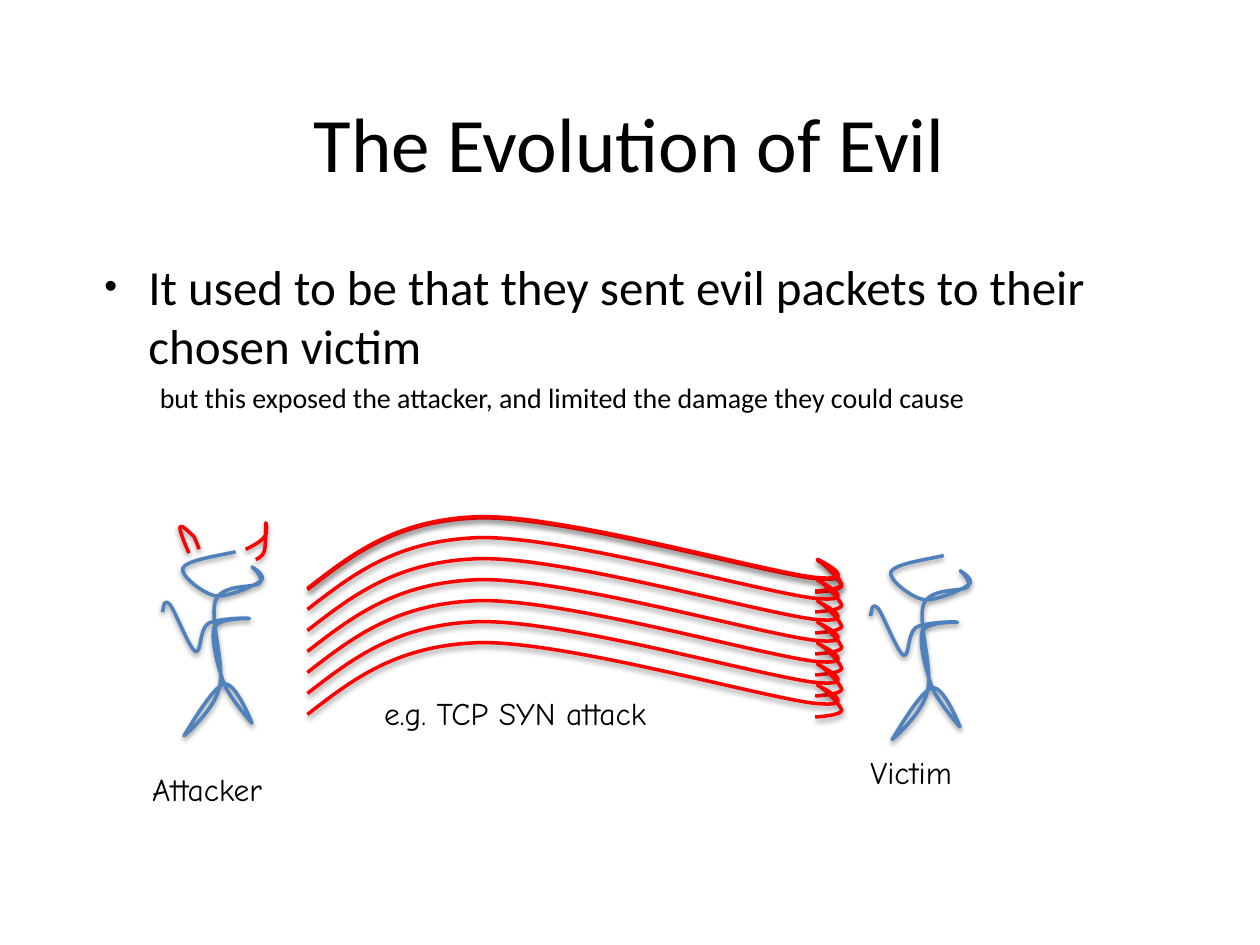
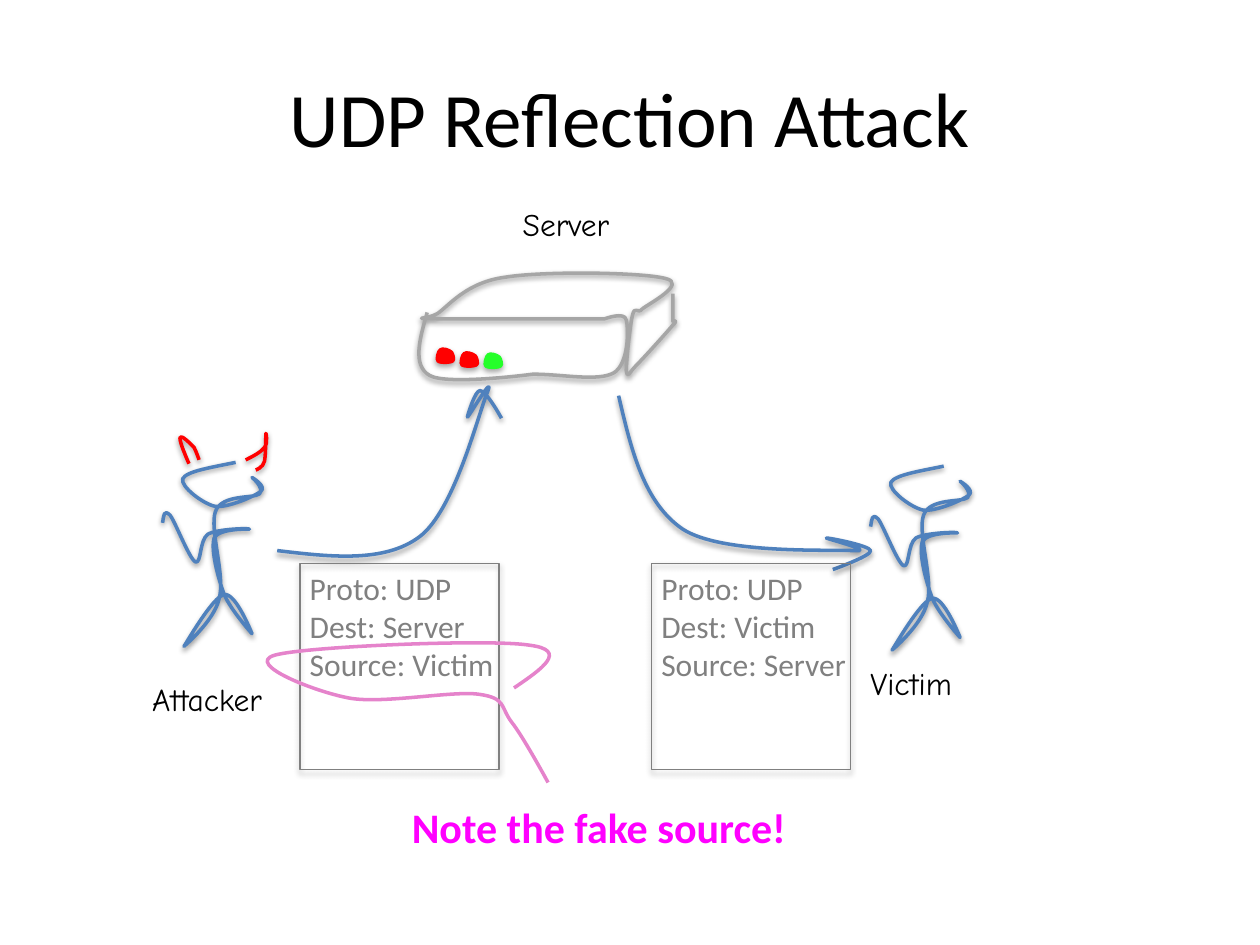
from lxml import etree
from pptx import Presentation
from pptx.dml.color import RGBColor
from pptx.enum import shapes, text
from pptx.oxml.ns import qn
from pptx.util import Inches, Pt

BLACK = RGBColor(0x00, 0x00, 0x00)
BLUE = RGBColor(0x4F, 0x81, 0xBD)
RED = RGBColor(0xFF, 0x00, 0x00)
GREEN = RGBColor(0x25, 0xFF, 0x2A)
SILVER = RGBColor(0xA6, 0xA6, 0xA6)
GRAY = RGBColor(0x80, 0x80, 0x80)
PINK = RGBColor(0xE5, 0x83, 0xCB)
MAGENTA = RGBColor(0xFF, 0x00, 0xFF)

BODY_FONT = "Calibri"
HAND_FONT = "Comic Neue"
UNIT = Inches(0.01)
STROKE_SHADOW = {"alpha": 38000, "blur": 40000, "dist": 20000}
SOLID_SHADOW = {"alpha": 35000, "blur": 40000, "dist": 23000}

# fmt: off
PERSON = [
    58, 0,
    39, 4, 19, 7, 16, 13,
    14, 19, 32, 33, 42, 35,
    52, 36, 73, 27, 78, 23,
    83, 19, 71, 12, 71, 12,
    71, 12, 81, 20, 77, 25,
    72, 29, 47, 25, 42, 39,
    37, 53, 50, 90, 45, 108,
    41, 126, 17, 146, 17, 146,
    18, 145, 40, 106, 49, 105,
    58, 103, 71, 136, 71, 136,
    71, 136, 54, 117, 49, 105,
    44, 92, 38, 69, 41, 60,
    45, 52, 70, 53, 69, 53,
    68, 52, 43, 53, 36, 57,
    29, 62, 31, 81, 26, 79,
    21, 76, 10, 47, 6, 42,
    1, 37, 1, 42, 0, 48,
]
HORNS = [
    [
        21, 1,
        17, -8, 13, -18, 14, -20,
        15, -22, 22, -15, 25, -12,
        27, -8, 29, -2, 29, -2,
    ],
    [
        66, -2,
        72, -5, 78, -8, 81, -12,
        84, -15, 82, -25, 82, -23,
        82, -22, 82, -6, 81, -1,
        80, 4, 74, 6, 74, 6,
    ],
]
EVIL_PACKET = [
    0, 57,
    35, 30, 70, 2, 137, 0,
    204, -1, 356, 42, 401, 48,
    446, 53, 401, 32, 405, 34,
    409, 35, 424, 50, 424, 54,
    423, 58, 403, 59, 403, 59,
]
SERVER = [
    6, 31,
    0, 52, -6, 73, 8, 81,
    22, 89, 90, 80, 90, 80,
    114, 80, 141, 86, 154, 79,
    166, 72, 166, 44, 164, 37,
    163, 30, 147, 36, 147, 36,
    147, 36, 14, 36, 14, 36,
    -9, 35, 5, 37, 14, 32,
    23, 26, 37, 7, 68, 3,
    98, -2, 176, -1, 195, 4,
    213, 8, 182, 24, 177, 28,
    173, 33, 171, 25, 169, 33,
    167, 41, 164, 70, 164, 77,
    165, 84, 166, 79, 172, 73,
    178, 67, 196, 47, 201, 41,
    206, 36, 201, 38, 201, 38,
    201, 38, 201, 16, 201, 16,
]
LIGHT = [
    3, 1,
    1, 2, -1, 10, 1, 11,
    2, 13, 12, 13, 14, 11,
    16, 10, 14, 4, 13, 3,
    11, 1, 5, -1, 3, 1,
]
REQUEST_ARROW = [
    0, 130,
    42, 135, 85, 140, 113, 119,
    141, 98, 160, 20, 167, 4,
    173, -12, 152, 24, 151, 24,
    151, 23, 157, 3, 161, 3,
    166, 3, 178, 25, 178, 25,
]
REPLY_ARROW = [
    0, 0,
    10, 43, 20, 85, 51, 106,
    82, 126, 168, 122, 187, 123,
    206, 124, 163, 113, 165, 113,
    168, 113, 199, 119, 200, 123,
    201, 127, 170, 138, 170, 138,
]
SOURCE_LOOP = [
    196, 36,
    218, 21, 240, 6, 208, 2,
    177, -3, 30, 3, 6, 10,
    -18, 17, 38, 39, 65, 44,
    92, 49, 147, 38, 168, 41,
    190, 44, 185, 51, 194, 63,
    203, 74, 223, 111, 223, 111,
]
# fmt: on


def style_outline(sp, line, width, fill=None, shadow=None):
    if fill is None:
        sp.fill.background()
    else:
        sp.fill.solid()
        sp.fill.fore_color.rgb = fill
    sp.line.color.rgb = line
    sp.line.width = Pt(width)
    sp.shadow.inherit = False
    if shadow:
        effects = sp._element.spPr.find(qn("a:effectLst"))
        outer = etree.SubElement(effects, qn("a:outerShdw"), {
            "blurRad": str(shadow["blur"]), "dist": str(shadow["dist"]),
            "dir": "5400000", "rotWithShape": "0"})
        color = etree.SubElement(outer, qn("a:srgbClr"), val=str(BLACK))
        etree.SubElement(color, qn("a:alpha"), val=str(shadow["alpha"]))


def add_curve(s, left, top, coords, line, width=2, fill=None, shadow=STROKE_SHADOW):
    points = list(zip(coords[::2], coords[1::2]))
    anchors = points[::3]
    min_x, min_y = (min(values) for values in zip(*anchors))
    builder = s.shapes.build_freeform(*anchors[0], scale=UNIT)
    builder.add_line_segments(anchors[1:], close=fill is not None)
    sp = builder.convert_to_shape(Inches(left), Inches(top))
    segments = list(sp._element.spPr.iter(qn("a:lnTo")))
    for i, segment in enumerate(segments):
        segment.tag = qn("a:cubicBezTo")
        for j, (x, y) in enumerate(points[3 * i + 1:3 * i + 3]):
            pt = etree.Element(qn("a:pt"), x=str(x - min_x), y=str(y - min_y))
            segment.insert(j, pt)
    style_outline(sp, line, width, fill, shadow)


def write(p, words, **font):
    r = p.add_run()
    r.text = words
    look = {"name": BODY_FONT, "size": Pt(18), "bold": False, **font}
    r.font.color.rgb = look.pop("color", BLACK)
    for name, value in look.items():
        setattr(r.font, name, value)


def add_text(s, left, top, width, height, lines, **font):
    tf = s.shapes.add_textbox(
        Inches(left), Inches(top), Inches(width), Inches(height)).text_frame
    tf.word_wrap = False
    tf.auto_size = text.MSO_AUTO_SIZE.SHAPE_TO_FIT_TEXT
    for i, line in enumerate(lines):
        write(tf.add_paragraph() if i else tf.paragraphs[0], line, **font)


def add_label(s, left, top, width, words):
    add_text(s, left, top, width, 0.4, [words], name=HAND_FONT)


def add_title(s, left, top, width, height, words):
    tf = s.shapes.add_textbox(
        Inches(left), Inches(top), Inches(width), Inches(height)).text_frame
    tf.word_wrap = True
    tf.vertical_anchor = text.MSO_ANCHOR.MIDDLE
    p = tf.paragraphs[0]
    p.alignment = text.PP_ALIGN.CENTER
    write(p, words, size=Pt(44))


def add_body(s, left, top, width, height, point, detail):
    tf = s.shapes.add_textbox(
        Inches(left), Inches(top), Inches(width), Inches(height)).text_frame
    tf.word_wrap = True
    rows = [(point, 28, 0.35, -0.35), (detail, 16, 0.44, 0)]
    for level, (words, size, margin, indent) in enumerate(rows):
        p = tf.add_paragraph() if level else tf.paragraphs[0]
        p.level = level
        p.space_before = Pt(size * 0.2)
        write(p, words, size=Pt(size))
        pPr = p._p.get_or_add_pPr()
        pPr.set("marL", str(Inches(margin)))
        pPr.set("indent", str(Inches(indent)))
        if indent:
            etree.SubElement(pPr, qn("a:buSzPct"), val="75000")
            etree.SubElement(pPr, qn("a:buFont"), typeface="Arial")
            etree.SubElement(pPr, qn("a:buChar"), char="•")


def add_attacker(s, left, top):
    add_curve(s, left, top, PERSON, BLUE)
    for horn in HORNS:
        add_curve(s, left, top, horn, RED)
    add_label(s, left - 0.18, top + 1.68, 1.28, "Attacker")


def add_victim(s, left, top):
    add_curve(s, left, top, PERSON, BLUE)
    add_label(s, left - 0.1, top + 1.52, 1.01, "Victim")


def add_people(s, left, top):
    add_attacker(s, left, top)
    add_victim(s, left + 5.62, top + 0.03)


def add_packet_stream(s, left, top):
    add_curve(s, left, top + 0.01, EVIL_PACKET, RED)
    for i in range(7):
        add_curve(s, left, top + i / 6, EVIL_PACKET, RED)
    add_label(s, left + 0.51, top + 1.36, 3.03, "e.g. TCP SYN attack")


def add_server(s, left, top):
    add_label(s, left + 0.72, top - 0.59, 1.08, "Server")
    add_curve(s, left, top, SERVER, SILVER)
    for dx, dy, color in [(0.13, 0.59, RED), (0.32, 0.62, RED), (0.51, 0.63, GREEN)]:
        add_curve(s, left + dx, top + dy, LIGHT, color, 0.75, color, SOLID_SHADOW)


def add_packet(s, left, top, dest, source):
    lines = ["Proto: UDP", f"Dest: {dest}", f"Source: {source}"]
    add_text(s, left - 0.02, top, 1.68, 1.01, lines, color=GRAY)
    sp = s.shapes.add_shape(shapes.MSO_SHAPE.RECTANGLE, Inches(left), Inches(top),
                            Inches(1.58), Inches(1.64))
    style_outline(sp, GRAY, 0.75, shadow=SOLID_SHADOW)


def add_fake_source_note(s, left, top):
    add_text(s, left + 1.05, top + 1.21, 3.22, 0.5, ["Note the fake source!"],
             size=Pt(24), bold=True, color=MAGENTA)
    add_curve(s, left, top, SOURCE_LOOP, PINK, shadow=None)


def build_evolution(s):
    add_title(s, 0.73, 0.31, 8.53, 1.63, "The Evolution of Evil")
    add_body(s, 0.73, 1.99, 8.53, 4.83,
             "It used to be that they sent evil packets to their chosen victim",
             "but this exposed the attacker, and limited the damage they could cause")
    add_people(s, 1.29, 4.38)
    add_packet_stream(s, 2.44, 4.1)


def build_reflection(s):
    add_title(s, 0.5, 0.3, 9, 1.25, "UDP Reflection Attack")
    add_people(s, 1.29, 3.67)
    add_server(s, 3.33, 2.17)
    add_curve(s, 2.2, 3.07, REQUEST_ARROW, BLUE)
    add_curve(s, 4.91, 3.14, REPLY_ARROW, BLUE)
    add_packet(s, 2.38, 4.47, "Server", "Victim")
    add_packet(s, 5.17, 4.47, "Victim", "Server")
    add_fake_source_note(s, 2.12, 5.1)


def main():
    prs = Presentation()
    prs.slide_width, prs.slide_height = Inches(10), Inches(7.5)
    for build in (build_evolution, build_reflection):
        build(prs.slides.add_slide(prs.slide_layouts[6]))
    prs.save("out.pptx")


if __name__ == "__main__":
    main()
